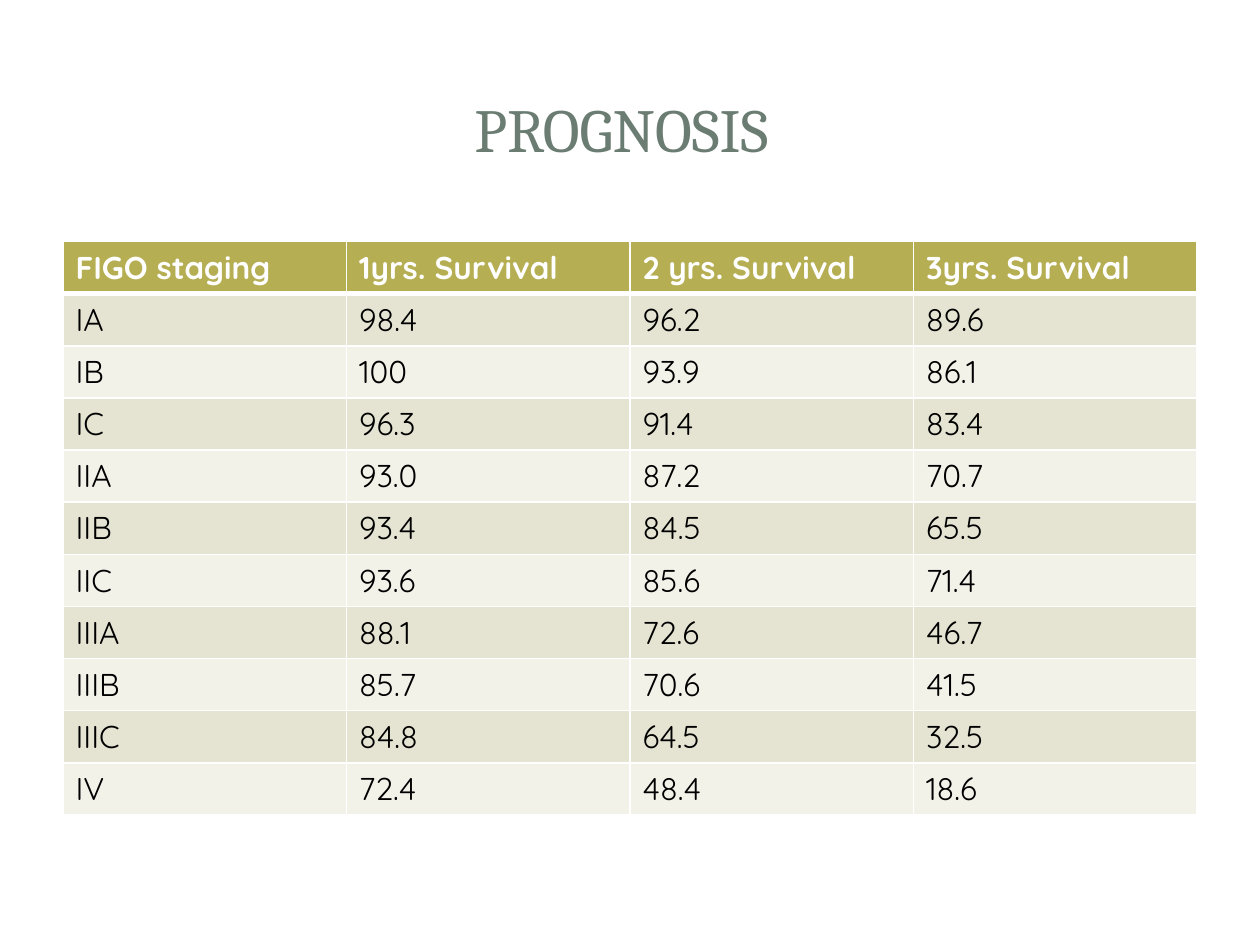
from lxml import etree
from pptx import Presentation
from pptx.dml.color import RGBColor
from pptx.enum.shapes import MSO_SHAPE
from pptx.enum.text import MSO_ANCHOR, PP_ALIGN
from pptx.oxml.ns import qn
from pptx.util import Pt

CENTER = PP_ALIGN.CENTER
MIDDLE = MSO_ANCHOR.MIDDLE
RECTANGLE = MSO_SHAPE.RECTANGLE
ROUNDED_RECTANGLE = MSO_SHAPE.ROUNDED_RECTANGLE
TITLE_ONLY_LAYOUT = 5

WHITE = RGBColor(0xFF, 0xFF, 0xFF)
BLACK = RGBColor(0x00, 0x00, 0x00)
TITLE_GREEN = RGBColor(0x6B, 0x7D, 0x72)
HEADER_OLIVE = RGBColor(0xB5, 0xAE, 0x53)
BANDS = (RGBColor(0xE5, 0xE3, 0xD1), RGBColor(0xF3, 0xF2, 0xE9))

HEADERS = ("FIGO staging", "1yrs. Survival", "2 yrs. Survival", "3yrs. Survival")
SURVIVAL = (
    ("IA", "98.4", "96.2", "89.6"),
    ("IB", "100", "93.9", "86.1"),
    ("IC", "96.3", "91.4", "83.4"),
    ("IIA", "93.0", "87.2", "70.7"),
    ("IIB", "93.4", "84.5", "65.5"),
    ("IIC", "93.6", "85.6", "71.4"),
    ("IIIA", "88.1", "72.6", "46.7"),
    ("IIIB", "85.7", "70.6", "41.5"),
    ("IIIC", "84.8", "64.5", "32.5"),
    ("IV", "72.4", "48.4", "18.6"),
)


def add_panel(slide, kind, left, top, width, height):
    panel = slide.shapes.add_shape(kind, Pt(left), Pt(top), Pt(width), Pt(height))
    panel.shadow.inherit = False
    panel.fill.solid()
    panel.fill.fore_color.rgb = WHITE
    panel.line.fill.background()
    return panel


def add_backdrop(slide, left, top, width, height):
    """Place the page card and the two nested title panels."""
    card = add_panel(slide, ROUNDED_RECTANGLE, left, top, width, height)
    card.adjustments[0] = 0.017
    frame = add_panel(slide, RECTANGLE, left + 14.4, top + 13.7, width - 28.8, 104.4)
    color = frame.fill._xPr.find(qn("a:solidFill"))[0]
    etree.SubElement(color, qn("a:alpha"), val="83000")
    add_panel(slide, RECTANGLE, left + 22.3, top + 21.6, width - 45.4, 87.8)


def add_title(slide, left, top, width, height):
    title = slide.shapes.title
    # Bring the title in front of the backdrop
    slide.shapes._spTree.append(title._element)
    title.left, title.top = Pt(left), Pt(top)
    title.width, title.height = Pt(width), Pt(height)
    title.text_frame.vertical_anchor = MIDDLE
    title.text_frame.text = "PROGNOSIS "
    paragraph = title.text_frame.paragraphs[0]
    paragraph.alignment = CENTER
    paragraph.font.name = "Cambria"
    paragraph.font.size = Pt(35)
    paragraph.font.color.rgb = TITLE_GREEN


def set_borders(cell, bottom_width):
    properties = cell._tc.get_or_add_tcPr()
    widths = {"a:lnL": 1, "a:lnR": 1, "a:lnT": 1, "a:lnB": bottom_width}
    for position, (tag, width) in enumerate(widths.items()):
        line = etree.Element(qn(tag), w=str(Pt(width)))
        fill = etree.SubElement(line, qn("a:solidFill"))
        etree.SubElement(fill, qn("a:srgbClr"), val=str(WHITE))
        properties.insert(position, line)


def fill_cell(cell, text, background, color, bold, bottom_width):
    cell.fill.solid()
    cell.fill.fore_color.rgb = background
    set_borders(cell, bottom_width)
    cell.text = text
    font = cell.text_frame.paragraphs[0].font
    font.name = "Quicksand"
    font.size = Pt(18)
    font.bold = bold
    font.color.rgb = color


def add_survival_table(slide, left, top, width, height):
    rows = (HEADERS,) + SURVIVAL
    table = slide.shapes.add_table(
        len(rows), len(HEADERS), Pt(left), Pt(top), Pt(width), Pt(height)
    ).table
    for row_index, values in enumerate(rows):
        for column_index, text in enumerate(values):
            cell = table.cell(row_index, column_index)
            if row_index == 0:
                fill_cell(cell, text, HEADER_OLIVE, WHITE, True, 3)
            else:
                band = BANDS[(row_index - 1) % 2]
                fill_cell(cell, text, band, BLACK, False, 1)


def main():
    presentation = Presentation()
    presentation.slide_width, presentation.slide_height = Pt(720), Pt(540)
    layout = presentation.slide_layouts[TITLE_ONLY_LAYOUT]
    slide = presentation.slides.add_slide(layout)
    add_backdrop(slide, 7.2, 7.9, 705.6, 524.9)
    add_title(slide, 34, 32.4, 650, 82)
    add_survival_table(slide, 36, 138, 648, 321.2)
    presentation.save("out.pptx")


if __name__ == "__main__":
    main()
